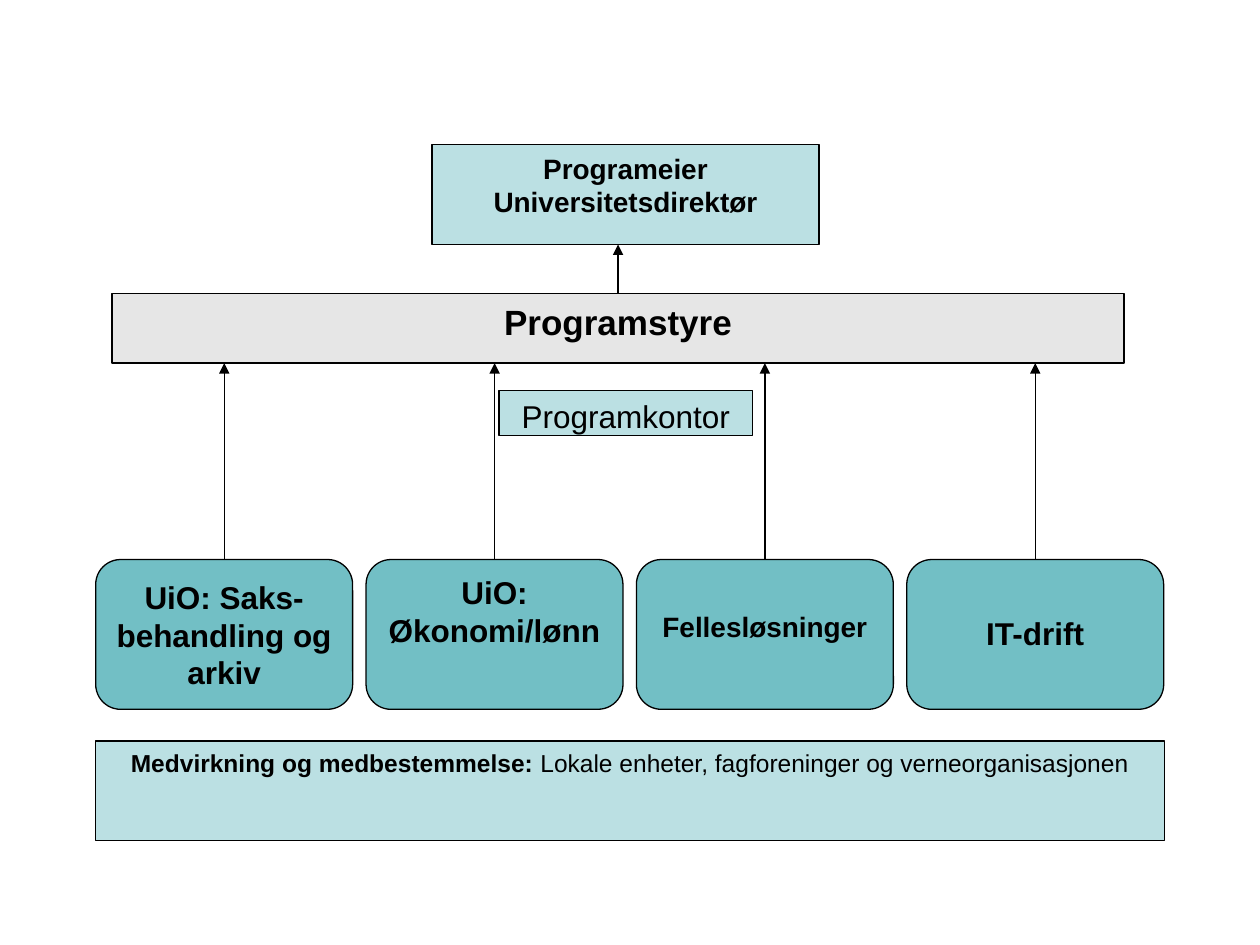
"""Build the programme organisation chart slide."""
from lxml import etree
from pptx import Presentation
from pptx import util as u
from pptx.dml.color import RGBColor
from pptx.enum import shapes, text
from pptx.oxml.ns import qn

BLACK = RGBColor(0x00, 0x00, 0x00)
GREY = RGBColor(0xE6, 0xE6, 0xE6)
PALE_TEAL = RGBColor(0xBB, 0xE0, 0xE3)
TEAL = RGBColor(0x72, 0xBF, 0xC5)

RECTANGLE = shapes.MSO_SHAPE.RECTANGLE
ROUNDED = shapes.MSO_SHAPE.ROUNDED_RECTANGLE
TOP = text.MSO_ANCHOR.TOP
MIDDLE = text.MSO_ANCHOR.MIDDLE

BOARD_BOTTOM = 7.32
PROJECT_LEFT, PROJECT_TOP, PROJECT_PITCH = 1.93, 11.28, 5.45
PROJECT_WIDTH, PROJECT_HEIGHT = 5.18, 3.02
PROJECTS = [
    (["UiO: Saks-", "behandling og arkiv"], 18, MIDDLE, 0.13),
    (["UiO: Økonomi/lønn"], 18, TOP, 0.13),
    (["Fellesløsninger"], 16, TOP, 0.87),
    (["IT-drift"], 18, TOP, 0.95),
]


def add_box(page, kind, place, fill, anchor=TOP, margin_top=0.13):
    """Add an outlined, filled box placed in centimetres."""
    box = page.shapes.add_shape(kind, *(u.Cm(value) for value in place))
    box.shadow.inherit = False
    box.fill.solid()
    box.fill.fore_color.rgb = fill
    box.line.color.rgb = BLACK
    box.line.width = u.Pt(0.75)
    frame = box.text_frame
    frame.word_wrap = True
    frame.vertical_anchor = anchor
    frame.margin_top = u.Cm(margin_top)
    return box


def add_span(para, words, size, bold=True):
    """Add one formatted run to a centred paragraph."""
    para.alignment = text.PP_ALIGN.CENTER
    span = para.add_run()
    span.text = words
    span.font.name = "Arial"
    span.font.size = u.Pt(size)
    span.font.bold = bold
    span.font.color.rgb = BLACK


def add_arrow(page, source, x, end_y):
    """Add an upward arrow from the top of a box."""
    arrow = page.shapes.add_connector(
        shapes.MSO_CONNECTOR.STRAIGHT, u.Cm(x), source.top, u.Cm(x), u.Cm(end_y))
    arrow.begin_connect(source, 0)
    arrow.end_x = arrow.begin_x
    arrow.line.color.rgb = BLACK
    arrow.line.width = u.Pt(0.75)
    etree.SubElement(arrow.line._get_or_add_ln(), qn("a:tailEnd"), type="triangle")
    etree.SubElement(arrow._element.spPr, qn("a:effectLst"))


def add_project(page, index, lines, size, anchor, margin_top):
    """Add one project box and its arrow to the board."""
    left = PROJECT_LEFT + index * PROJECT_PITCH
    place = (left, PROJECT_TOP, PROJECT_WIDTH, PROJECT_HEIGHT)
    box = add_box(page, ROUNDED, place, TEAL, anchor, margin_top)
    frame = box.text_frame
    for number, line in enumerate(lines):
        para = frame.add_paragraph() if number else frame.paragraphs[0]
        add_span(para, line, size)
    add_arrow(page, box, left + PROJECT_WIDTH / 2, BOARD_BOTTOM)


def main():
    """Build and save the slide."""
    deck = Presentation()
    deck.slide_width, deck.slide_height = u.Cm(25.4), u.Cm(19.05)
    page = deck.slides.add_slide(deck.slide_layouts[6])

    owner = add_box(page, RECTANGLE, (8.71, 2.92, 7.8, 2.01), PALE_TEAL)
    para = owner.text_frame.paragraphs[0]
    add_span(para, "Programeier", 16)
    para.add_line_break()
    add_span(para, "Universitetsdirektør", 16)

    board = add_box(page, RECTANGLE, (2.26, 5.92, 20.4, 1.4), GREY)
    add_span(board.text_frame.paragraphs[0], "Programstyre", 20)
    add_arrow(page, board, 12.46, 4.93)

    office = add_box(page, RECTANGLE, (10.06, 7.87, 5.11, 0.91), PALE_TEAL)
    add_span(office.text_frame.paragraphs[0], "Programkontor", 18, bold=False)

    for index, project in enumerate(PROJECTS):
        add_project(page, index, *project)

    involvement = add_box(page, RECTANGLE, (1.93, 14.94, 21.54, 2.01), PALE_TEAL)
    para = involvement.text_frame.paragraphs[0]
    add_span(para, "Medvirkning og medbestemmelse:", 14)
    add_span(para, " Lokale enheter, fagforeninger og verneorganisasjonen", 14, bold=False)

    deck.save("out.pptx")


if __name__ == "__main__":
    main()
